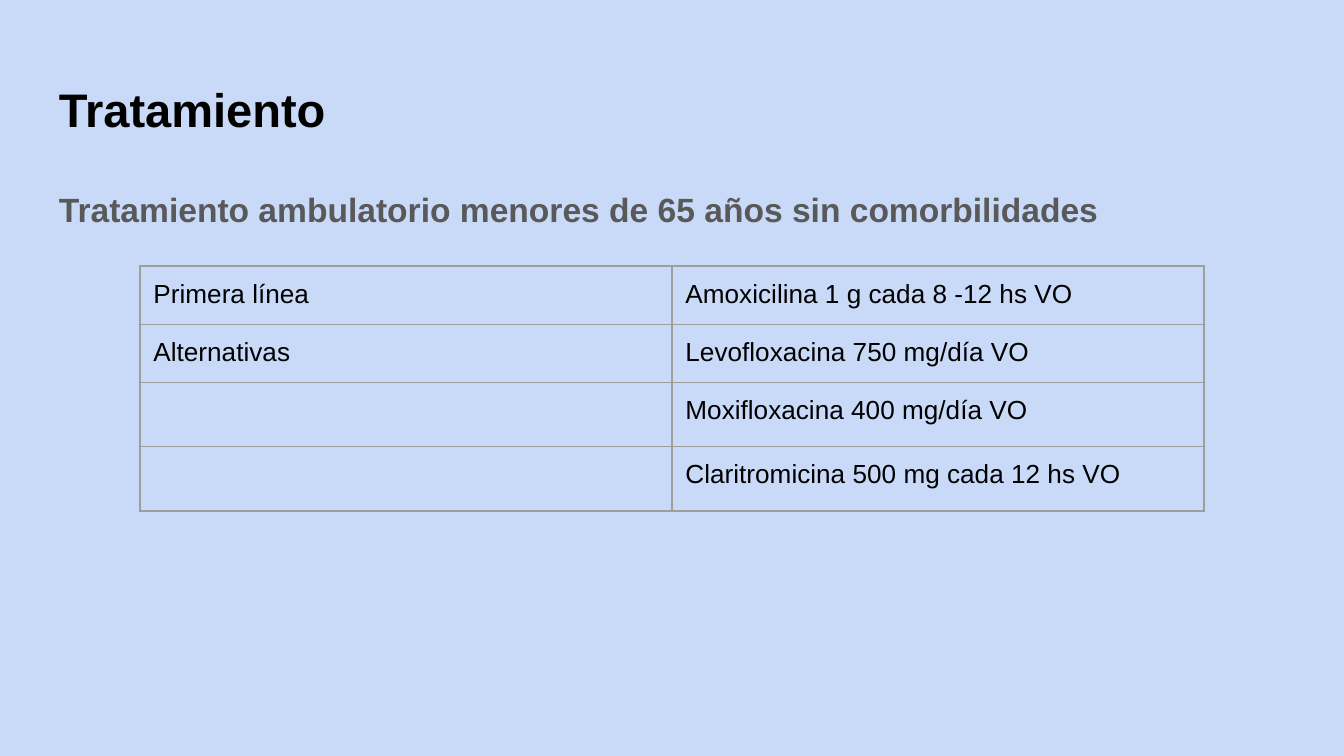
import dataclasses

import lxml.etree
import pptx
import pptx.dml.color
import pptx.enum.text
import pptx.oxml.ns
import pptx.util

Pt = pptx.util.Pt
COLORS = {"background": "C9DAF8", "title": "000000", "subtitle": "595959",
          "cell": "000000", "border": "9E9E9E"}
FONT = "Arial"
INSET = 7.2


@dataclasses.dataclass(frozen=True)
class Heading:
    text: str
    top: float
    height: float
    size: float
    color: str
    anchor: pptx.enum.text.MSO_ANCHOR
    line_spacing: float


@dataclasses.dataclass(frozen=True)
class Treatment:
    line: str
    drug: str
    height: float


HEADINGS = [
    Heading("Tratamiento", 35.3, 45.4, 25.2, "title",
            pptx.enum.text.MSO_ANCHOR.BOTTOM, 1.0),
    Heading("Tratamiento ambulatorio menores de 65 años sin comorbilidades",
            90.7, 269.3, 18, "subtitle", pptx.enum.text.MSO_ANCHOR.TOP, 1.15),
]
TREATMENTS = [
    Treatment("Primera línea", "Amoxicilina 1 g cada 8 -12 hs VO", 30),
    Treatment("Alternativas", "Levofloxacina 750 mg/día VO", 30),
    Treatment("", "Moxifloxacina 400 mg/día VO", 34.4),
    Treatment("", "Claritromicina 500 mg cada 12 hs VO", 34.4),
]


def rgb(name: str) -> pptx.dml.color.RGBColor:
    return pptx.dml.color.RGBColor.from_string(COLORS[name])


def style_paragraph(para, size: float, color: str, bold: bool) -> None:
    para.font.name = FONT
    para.font.size = Pt(size)
    para.font.bold = bold
    para.font.color.rgb = rgb(color)


def set_insets(holder) -> None:
    holder.margin_left = holder.margin_right = Pt(INSET)
    holder.margin_top = holder.margin_bottom = Pt(INSET)


def add_heading(page, heading: Heading) -> None:
    box = page.shapes.add_textbox(Pt(24.5), Pt(heading.top), Pt(671), Pt(heading.height))
    frame = box.text_frame
    frame.word_wrap = True
    frame.vertical_anchor = heading.anchor
    set_insets(frame)
    para = frame.paragraphs[0]
    para.text = heading.text
    para.line_spacing = heading.line_spacing
    style_paragraph(para, heading.size, heading.color, True)


def add_borders(cell) -> None:
    properties = cell._tc.get_or_add_tcPr()
    qn = pptx.oxml.ns.qn
    for index, side in enumerate(("lnL", "lnR", "lnT", "lnB")):
        line = lxml.etree.Element(qn(f"a:{side}"), w=str(Pt(0.75)))
        fill = lxml.etree.SubElement(line, qn("a:solidFill"))
        lxml.etree.SubElement(fill, qn("a:srgbClr"), val=COLORS["border"])
        properties.insert(index, line)


def fill_cell(cell, text: str) -> None:
    cell.fill.background()
    set_insets(cell)
    para = cell.text_frame.paragraphs[0]
    if text:
        para.text = text
    style_paragraph(para, 14, "cell", False)
    add_borders(cell)


def add_treatments(page, treatments: list[Treatment]) -> None:
    height = sum(treatment.height for treatment in treatments)
    frame = page.shapes.add_table(len(treatments), 2, Pt(75), Pt(142.5), Pt(570), Pt(height))
    table = frame.table
    table.first_row = False
    table.horz_banding = False
    for row, treatment in zip(table.rows, treatments):
        row.height = Pt(treatment.height)
        for cell, text in zip(row.cells, (treatment.line, treatment.drug)):
            fill_cell(cell, text)


def main() -> None:
    deck = pptx.Presentation()
    deck.slide_width, deck.slide_height = Pt(720), Pt(405)
    page = deck.slides.add_slide(deck.slide_layouts[6])
    page.background.fill.solid()
    page.background.fill.fore_color.rgb = rgb("background")
    for heading in HEADINGS:
        add_heading(page, heading)
    add_treatments(page, TREATMENTS)
    deck.save("out.pptx")


if __name__ == "__main__":
    main()
